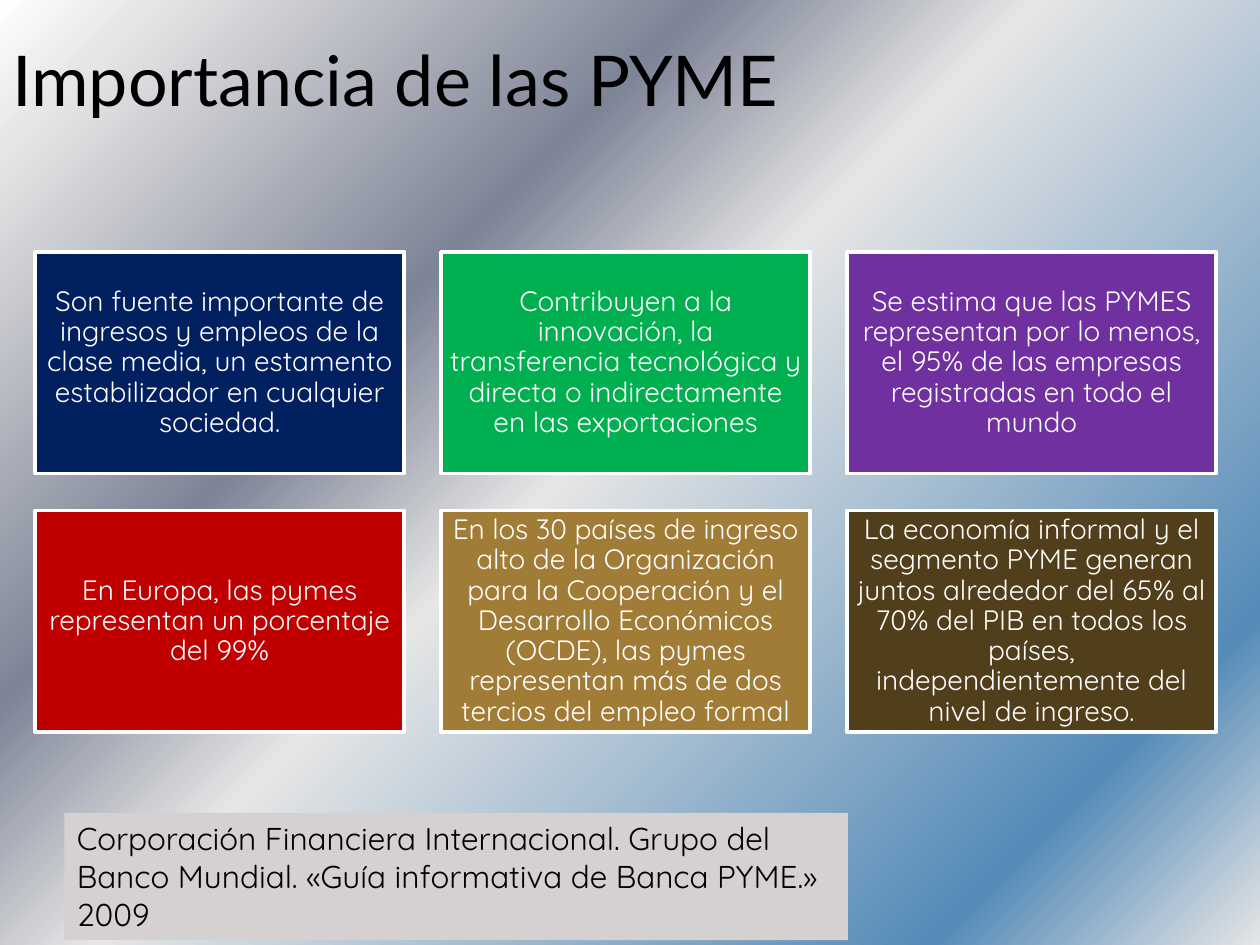
from dataclasses import dataclass

from pptx import Presentation
from pptx.dml.color import RGBColor
from pptx.enum.shapes import MSO_SHAPE
from pptx.enum.text import MSO_ANCHOR, MSO_AUTO_SIZE, PP_ALIGN
from pptx.oxml import parse_xml
from pptx.oxml.ns import nsdecls
from pptx.shapes.autoshape import Shape
from pptx.slide import Slide
from pptx.util import Pt


@dataclass(frozen=True)
class Theme:
    title_font: str = "Lato"
    body_font: str = "Quicksand"
    title_size: float = 40
    card_size: float = 16
    source_size: float = 18
    dark: str = "000000"
    light: str = "FFFFFF"
    source_fill: str = "D5D1D1"
    # Background stops: percent, colour
    background: tuple[tuple[int, str], ...] = (
        (0, "FFFFFF"), (7, "E6E6E6"), (32, "7D8496"),
        (47, "E6E6E6"), (85, "558BB8"), (100, "E6E6E6"),
    )


@dataclass(frozen=True)
class Area:
    left: float
    top: float
    width: float
    height: float

    def lengths(self) -> tuple[Pt, ...]:
        return Pt(self.left), Pt(self.top), Pt(self.width), Pt(self.height)


@dataclass(frozen=True)
class Card:
    text: str
    fill: str


THEME = Theme()
TITLE_AREA = Area(0, 0, 648, 90)
SOURCE_AREA = Area(36.8, 464.5, 447.8, 72.7)

# Card grid
COLUMNS = 3
FIRST_CARD = Area(20, 144, 211, 126.7)
CARD_GAP = 21
CARD_INSET = 4.8
CARDS = [
    Card("Son fuente importante de ingresos y empleos de la clase media, "
         "un estamento estabilizador en cualquier sociedad.", "002060"),
    Card("Contribuyen a la innovación, la transferencia tecnológica y directa "
         "o indirectamente en las exportaciones", "00B050"),
    Card("Se estima que las PYMES representan por lo menos, el 95% de las "
         "empresas registradas en todo el mundo", "7030A0"),
    Card("En Europa, las pymes representan un porcentaje del 99%", "C00000"),
    Card("En los 30 países de ingreso alto de la Organización para la "
         "Cooperación y el Desarrollo Económicos (OCDE), las pymes representan "
         "más de dos tercios del empleo formal", "A17C36"),
    Card("La economía informal y el segmento PYME generan juntos alrededor del "
         "65% al 70% del PIB en todos los países, independientemente del nivel "
         "de ingreso.", "513E1B"),
]


def paint_background(slide: Slide) -> None:
    stops = "".join(
        f'<a:gs pos="{percent * 1000}"><a:srgbClr val="{color}"/></a:gs>'
        for percent, color in THEME.background
    )
    background = parse_xml(
        f'<p:bg {nsdecls("p", "a")}><p:bgPr><a:gradFill rotWithShape="1">'
        f'<a:gsLst>{stops}</a:gsLst><a:path path="circle">'
        '<a:fillToRect r="100000" b="100000"/></a:path></a:gradFill>'
        '<a:effectLst/></p:bgPr></p:bg>'
    )
    slide.element.cSld.insert(0, background)


def write_text(box: Shape, text: str, font: str, size: float, color: str,
               align: PP_ALIGN = PP_ALIGN.LEFT) -> None:
    frame = box.text_frame
    frame.word_wrap = True
    frame.vertical_anchor = MSO_ANCHOR.MIDDLE
    frame.text = text
    para = frame.paragraphs[0]
    para.alignment = align
    span = para.runs[0]
    span.font.name = font
    span.font.size = Pt(size)
    span.font.color.rgb = RGBColor.from_string(color)


def add_panel(slide: Slide, area: Area, fill: str) -> Shape:
    panel = slide.shapes.add_shape(MSO_SHAPE.RECTANGLE, *area.lengths())
    panel.shadow.inherit = False
    panel.fill.solid()
    panel.fill.fore_color.rgb = RGBColor.from_string(fill)
    panel.line.fill.background()
    return panel


def add_card(slide: Slide, card: Card, index: int) -> None:
    row, column = divmod(index, COLUMNS)
    width, height = FIRST_CARD.width, FIRST_CARD.height
    area = Area(FIRST_CARD.left + column * (width + CARD_GAP),
                FIRST_CARD.top + row * (height + CARD_GAP), width, height)
    panel = add_panel(slide, area, card.fill)
    panel.line.color.rgb = RGBColor.from_string(THEME.light)
    panel.line.width = Pt(2)
    write_text(panel, card.text, THEME.body_font, THEME.card_size,
               THEME.light, PP_ALIGN.CENTER)
    frame = panel.text_frame
    frame.margin_left = frame.margin_right = Pt(CARD_INSET)
    frame.margin_top = frame.margin_bottom = Pt(CARD_INSET)
    frame.paragraphs[0].line_spacing = 0.9


def main() -> None:
    deck = Presentation()
    deck.slide_width, deck.slide_height = Pt(720), Pt(540)
    page = deck.slides.add_slide(deck.slide_layouts[6])
    paint_background(page)

    # Title
    title = page.shapes.add_textbox(*TITLE_AREA.lengths())
    write_text(title, "Importancia de las PYME", THEME.title_font,
               THEME.title_size, THEME.dark)

    # Cards
    for index, card in enumerate(CARDS):
        add_card(page, card, index)

    # Source
    source = add_panel(page, SOURCE_AREA, THEME.source_fill)
    write_text(source, "Corporación Financiera Internacional. Grupo del Banco "
               "Mundial. «Guía informativa de Banca PYME.» 2009",
               THEME.body_font, THEME.source_size, THEME.dark)
    source.text_frame.vertical_anchor = MSO_ANCHOR.TOP
    source.text_frame.auto_size = MSO_AUTO_SIZE.SHAPE_TO_FIT_TEXT

    deck.save("out.pptx")


if __name__ == "__main__":
    main()
